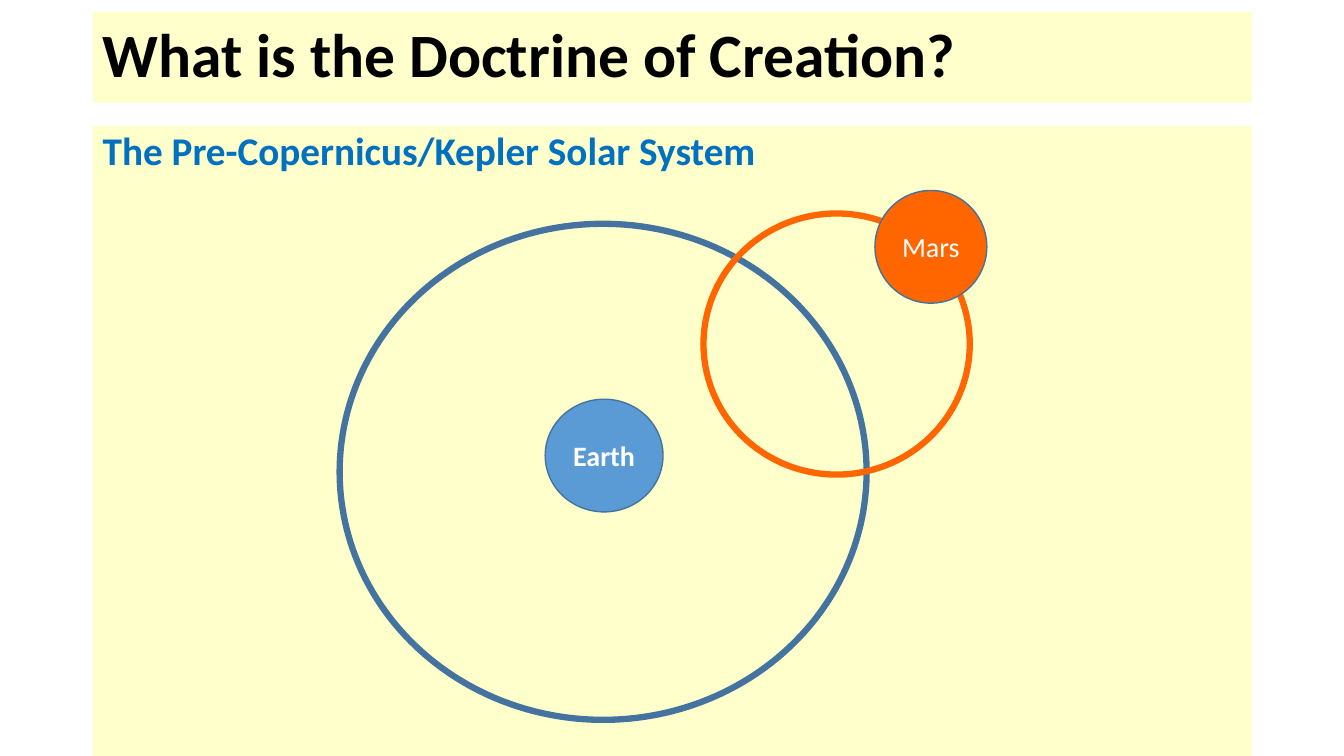
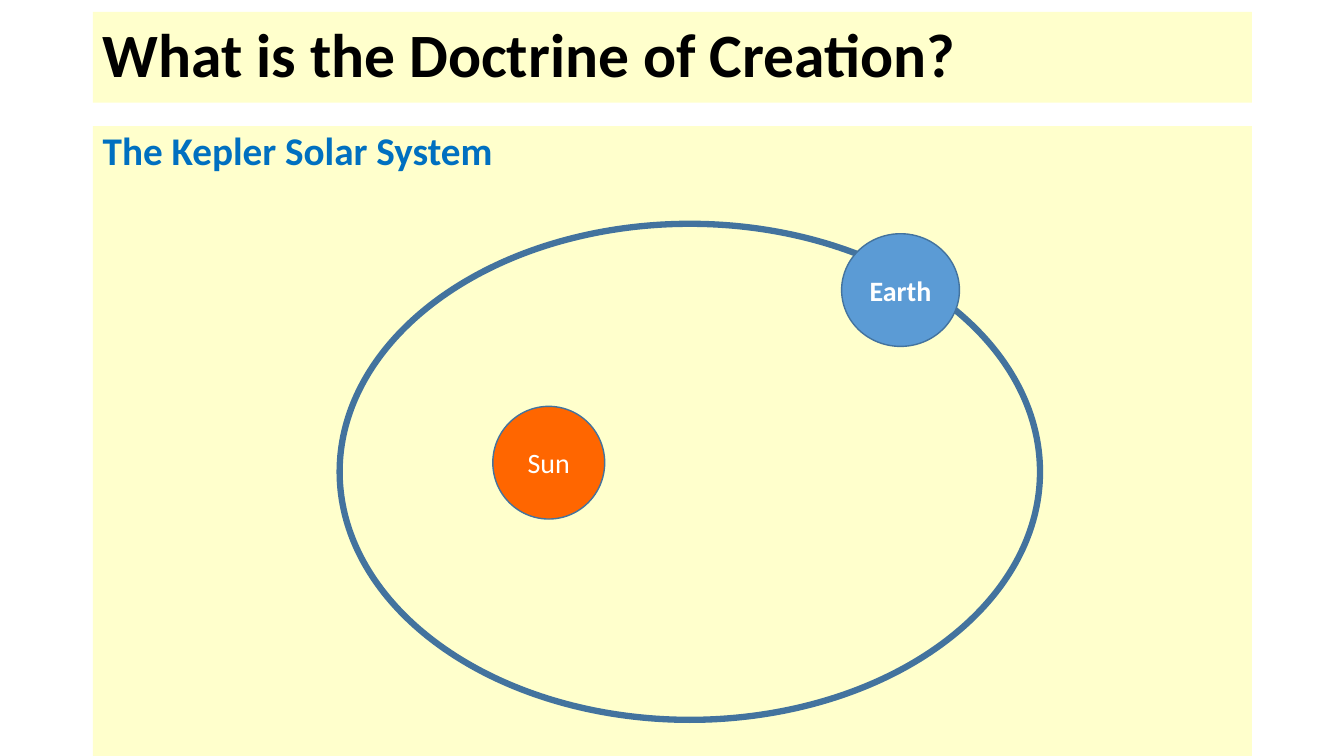
from pptx import Presentation
from pptx.dml.color import RGBColor
from pptx.enum.shapes import MSO_SHAPE
from pptx.enum.text import MSO_ANCHOR, PP_ALIGN
from pptx.util import Cm, Pt

COLORS = {
    "panel": "FFFFCC",
    "title": "000000",
    "heading": "0070C0",
    "blue": "5B9BD5",
    "outline": "43739E",
    "orange": "FF6600",
    "label": "FFFFFF",
}
FONT = "Calibri"
TITLE = "What is the Doctrine of Creation?"
PANEL_LEFT, PANEL_WIDTH = 2.34, 29.21
ORBIT_LEFT, ORBIT_TOP, ORBIT_HEIGHT = 8.56, 5.64, 12.5

# Each body: size, fill and whether its label is bold
EARTH = (2.97, 2.84, "blue", True)
FIERY = (2.82, 2.84, "orange", False)

# Each slide: heading, then its shapes from back to front
# Orbit: left, top, width, height, line colour
# Body: name, left, top, style
SLIDES = [
    ("The Pre-Copernicus/Kepler Solar System", [
        ("body", "Earth", 13.74, 10.06, EARTH),
        ("orbit", ORBIT_LEFT, ORBIT_TOP, 13.28, ORBIT_HEIGHT, "outline"),
        ("orbit", 17.73, 5.38, 6.71, 6.58, "orange"),
        ("body", "Mars", 22.05, 4.8, FIERY),
    ]),
    ("The Kepler Solar System", [
        ("orbit", ORBIT_LEFT, ORBIT_TOP, 17.65, ORBIT_HEIGHT, "outline"),
        ("body", "Sun", 12.42, 10.24, FIERY),
        ("body", "Earth", 21.21, 5.89, EARTH),
    ]),
]


def add_figure(page, kind, place, fill=None, line=None, weight=1):
    """Add a flat shape at left, top, width, height in centimetres."""
    shape = page.shapes.add_shape(kind, *[Cm(length) for length in place])
    shape.shadow.inherit = False
    if fill:
        shape.fill.solid()
        shape.fill.fore_color.rgb = RGBColor.from_string(COLORS[fill])
    else:
        shape.fill.background()
    if line:
        shape.line.color.rgb = RGBColor.from_string(COLORS[line])
        shape.line.width = Pt(weight)
    else:
        shape.line.fill.background()
    return shape


def write(shape, text, size, color, bold, align, anchor):
    """Put one formatted paragraph into a shape and return it."""
    frame = shape.text_frame
    frame.text = text
    frame.vertical_anchor = anchor
    paragraph = frame.paragraphs[0]
    paragraph.alignment = align
    font = paragraph.runs[0].font
    font.name, font.size, font.bold = FONT, Pt(size), bold
    font.color.rgb = RGBColor.from_string(COLORS[color])
    return paragraph


deck = Presentation()
deck.slide_width, deck.slide_height = Cm(33.87), Cm(19.05)

for heading, figures in SLIDES:
    page = deck.slides.add_slide(deck.slide_layouts[6])

    # Title band and content panel
    panels = [
        (TITLE, 0.3, 2.29, 44, "title", MSO_ANCHOR.MIDDLE, 0),
        (heading, 3.18, 15.87, 28, "heading", MSO_ANCHOR.TOP, 10),
    ]
    for text, top, height, size, color, anchor, space in panels:
        place = (PANEL_LEFT, top, PANEL_WIDTH, height)
        panel = add_figure(page, MSO_SHAPE.RECTANGLE, place, "panel")
        paragraph = write(panel, text, size, color, True, PP_ALIGN.LEFT, anchor)
        paragraph.line_spacing = 0.9
        paragraph.space_before = Pt(space)

    # Orbits and heavenly bodies
    for role, *details in figures:
        if role == "orbit":
            *place, color = details
            add_figure(page, MSO_SHAPE.OVAL, place, line=color, weight=4.5)
        else:
            name, left, top, (width, height, fill, bold) = details
            place = (left, top, width, height)
            disc = add_figure(page, MSO_SHAPE.OVAL, place, fill, "outline")
            write(disc, name, 20, "label", bold, PP_ALIGN.CENTER, MSO_ANCHOR.MIDDLE)
            disc.text_frame.word_wrap = False

deck.save("out.pptx")
